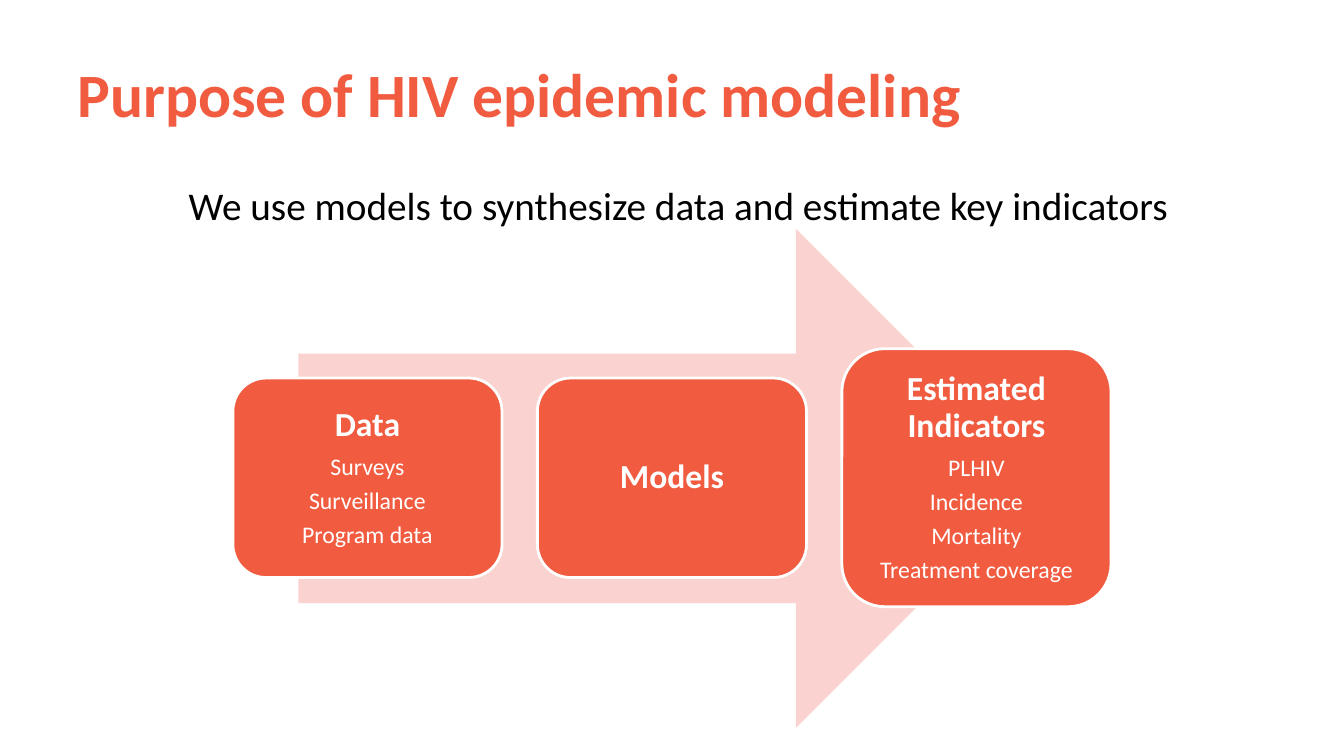
from pptx import Presentation
from pptx.dml.color import RGBColor
from pptx.enum.shapes import MSO_SHAPE as Shape
from pptx.enum.text import MSO_ANCHOR as Anchor, PP_ALIGN as Align
from pptx.util import Inches, Pt

COLORS = {"coral": "F15B40", "pink": "FAD2CF", "white": "FFFFFF", "black": "000000"}
FONT = "Calibri"
CARD_LEFT, CARD_STEP, CARD_WIDTH = 2.31, 3.02, 2.67
CARD_MIDDLE = 4.74
CARDS = [
    (1.98, "Data", ["Surveys", "Surveillance", "Program data"]),
    (1.98, "Models", []),
    (2.56, "Estimated Indicators",
     ["PLHIV", "Incidence", "Mortality", "Treatment coverage"]),
]


def color(name):
    return RGBColor.from_string(COLORS[name])


def style(para, size, hue, bold=False, align=Align.LEFT):
    para.alignment = align
    font = para.font
    font.name, font.size, font.bold = FONT, Pt(size), bold
    font.color.rgb = color(hue)


def add_text(slide, box, text, size, hue, anchor=Anchor.TOP, **look):
    frame = slide.shapes.add_textbox(*map(Inches, box)).text_frame
    frame.word_wrap = True
    frame.vertical_anchor = anchor
    frame.text = text
    style(frame.paragraphs[0], size, hue, **look)


def add_block(slide, kind, box, fill):
    shape = slide.shapes.add_shape(kind, *map(Inches, box))
    shape.shadow.inherit = False
    shape.fill.solid()
    shape.fill.fore_color.rgb = color(fill)
    shape.line.fill.background()
    return shape


def add_card(slide, left, height, head, items):
    """Add a rounded card, centred on the arrow, with a heading and its items."""
    box = (left, CARD_MIDDLE - height / 2, CARD_WIDTH, height)
    card = add_block(slide, Shape.ROUNDED_RECTANGLE, box, "coral")
    card.line.color.rgb = color("white")
    card.line.width = Pt(2)
    frame = card.text_frame
    frame.word_wrap = True
    frame.vertical_anchor = Anchor.MIDDLE
    frame.margin_left = frame.margin_right = Inches(0.1)
    frame.margin_top = frame.margin_bottom = Inches(0.1)
    frame.text = "\n".join([head, *items])
    for i, para in enumerate(frame.paragraphs):
        size = 17 if i else 24
        style(para, size, "white", bold=i == 0, align=Align.CENTER)
        para.line_spacing = 0.9
        para.space_after = Pt(round(size * 0.35))


def main():
    deck = Presentation()
    deck.slide_width, deck.slide_height = Inches(13.33), Inches(7.5)
    slide = deck.slides.add_slide(deck.slide_layouts[6])
    add_text(slide, (0.67, 0.3, 12, 1.25), "Purpose of HIV epidemic modeling",
             44, "coral", Anchor.MIDDLE, bold=True)
    add_text(slide, (0.67, 1.75, 12.11, 4.95),
             "We use models to synthesize data and estimate key indicators",
             28, "black", align=Align.CENTER)
    add_block(slide, Shape.RIGHT_ARROW, (2.96, 2.27, 7.41, 4.95), "pink")
    for i, card in enumerate(CARDS):
        add_card(slide, CARD_LEFT + i * CARD_STEP, *card)
    deck.save("out.pptx")


if __name__ == "__main__":
    main()
